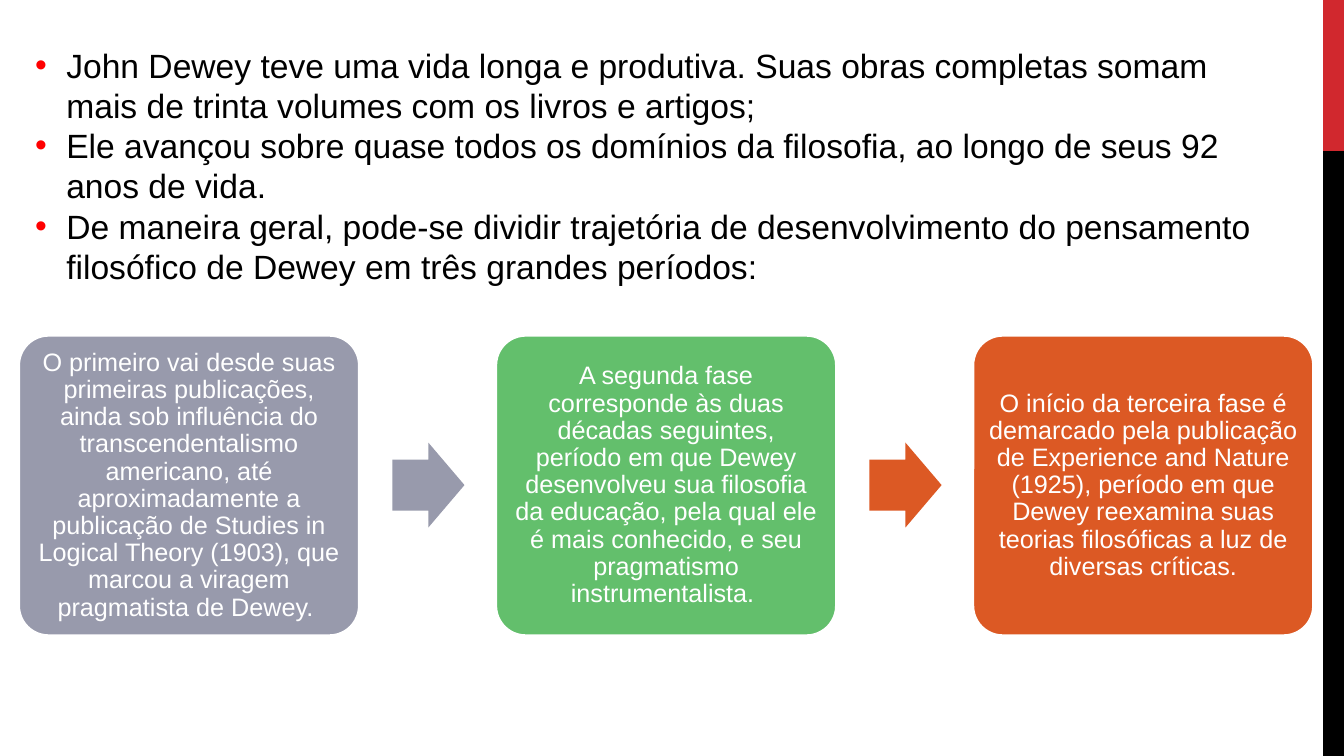
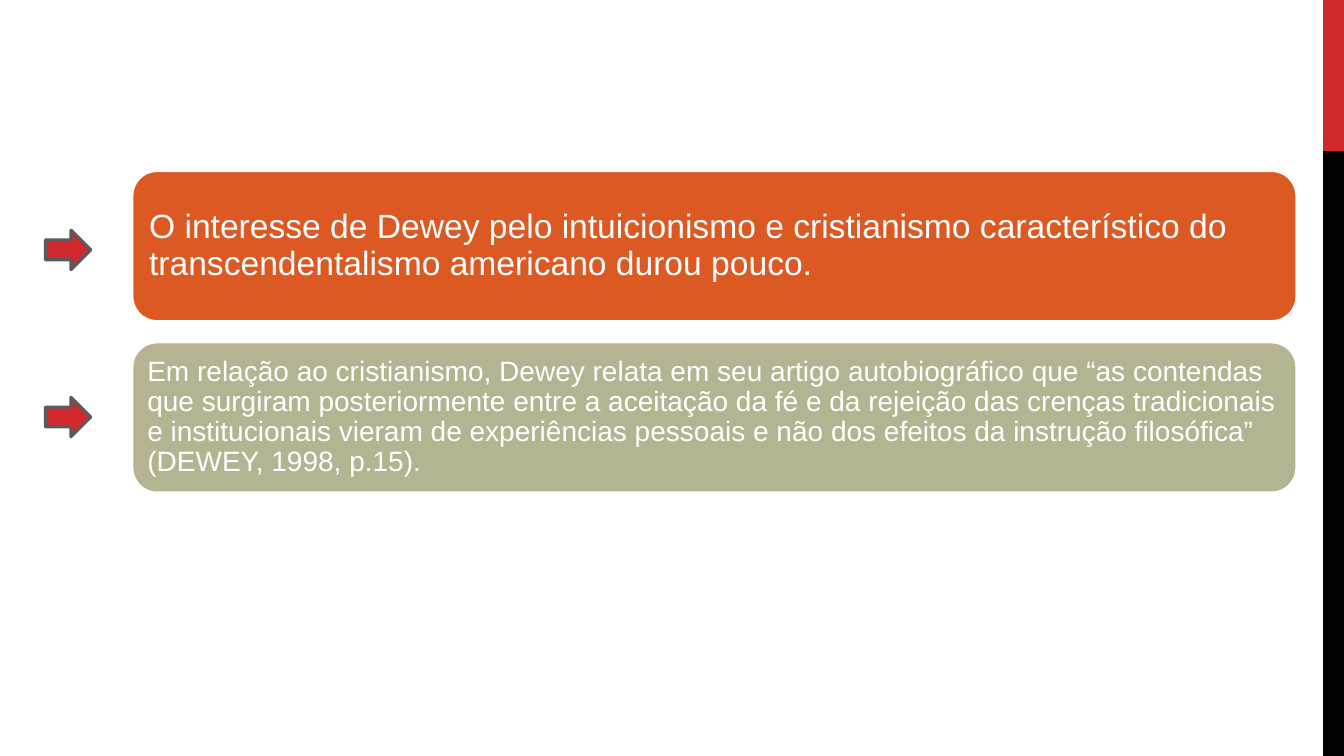
from lxml.etree import SubElement
from pptx import Presentation
from pptx.dml.color import RGBColor
from pptx.enum.shapes import MSO_SHAPE
from pptx.enum.text import MSO_ANCHOR, PP_ALIGN
from pptx.oxml.ns import qn
from pptx.util import Inches, Pt

RED = RGBColor(0xD1, 0x28, 0x2E)
BULLET_RED = RGBColor(0xFF, 0x00, 0x00)
BLACK = RGBColor(0x00, 0x00, 0x00)
WHITE = RGBColor(0xFF, 0xFF, 0xFF)
SLATE = RGBColor(0x98, 0x9A, 0xAC)
GREEN = RGBColor(0x63, 0xBF, 0x6C)
ORANGE = RGBColor(0xDC, 0x59, 0x24)
OLIVE = RGBColor(0xB4, 0xB3, 0x92)
GRAY = RGBColor(0x5A, 0x5A, 0x5A)

COLUMNS, ROWS = 160, 90
FONT = "Arial"
BLANK_LAYOUT = 6

INTRODUCTION = [
    "John Dewey teve uma vida longa e produtiva. Suas obras completas somam mais de trinta volumes "
    "com os livros e artigos;",
    "Ele avançou sobre quase todos os domínios da filosofia, ao longo de seus 92 anos de vida.",
    "De maneira geral, pode-se dividir trajetória de desenvolvimento do pensamento filosófico de "
    "Dewey em três grandes períodos:",
]
PERIODS = [
    (SLATE, "O primeiro vai desde suas primeiras publicações, ainda sob influência do "
     "transcendentalismo americano, até aproximadamente a publicação de Studies in Logical Theory "
     "(1903), que marcou a viragem pragmatista de Dewey. "),
    (GREEN, "A segunda fase corresponde às duas décadas seguintes, período em que Dewey desenvolveu "
     "sua filosofia da educação, pela qual ele é mais conhecido, e seu pragmatismo "
     "instrumentalista. "),
    (ORANGE, "O início da terceira fase é demarcado pela publicação de Experience and Nature (1925), "
     "período em que Dewey reexamina suas teorias filosóficas a luz de diversas críticas."),
]
REMARKS = [
    (ORANGE, 24, 0.1, "O interesse de Dewey pelo intuicionismo e cristianismo característico do "
     "transcendentalismo americano durou pouco."),
    (OLIVE, 20, 0.08, "Em relação ao cristianismo, Dewey relata em seu artigo autobiográfico que “as "
     "contendas que surgiram posteriormente entre a aceitação da fé e da rejeição das crenças "
     "tradicionais e institucionais vieram de experiências pessoais e não dos efeitos da instrução "
     "filosófica” (DEWEY, 1998, p.15)."),
]


class DeckBuilder:
    """Holds the shared style and the slide being built."""

    def __init__(self):
        """Start an empty widescreen deck."""
        self.deck = Presentation()
        self.deck.slide_width = Inches(13.333)
        self.deck.slide_height = Inches(7.5)
        self.page = None

    def area(self, left, top, width, height):
        """Turn grid columns and rows into slide lengths."""
        column = self.deck.slide_width / COLUMNS
        row = self.deck.slide_height / ROWS
        return int(left * column), int(top * row), int(width * column), int(height * row)

    def new_page(self):
        """Add a slide with the two bands on its right edge."""
        self.page = self.deck.slides.add_slide(self.deck.slide_layouts[BLANK_LAYOUT])
        self.shape(MSO_SHAPE.RECTANGLE, (157.5, 0, 2.5, 18), RED)
        self.shape(MSO_SHAPE.RECTANGLE, (157.5, 18, 2.5, 72), BLACK)

    def shape(self, kind, place, fill, line=None, adjustments=()):
        """Add a flat filled shape, with an outline if a line colour is given."""
        shape = self.page.shapes.add_shape(kind, *self.area(*place))
        shape.shadow.inherit = False
        shape.fill.solid()
        shape.fill.fore_color.rgb = fill
        if line is None:
            shape.line.fill.background()
        else:
            shape.line.color.rgb = line
            shape.line.width = Pt(2.25)
        for index, value in enumerate(adjustments):
            shape.adjustments[index] = value
        return shape

    def style(self, para, size, color):
        """Set the font of a paragraph."""
        para.font.name = FONT
        para.font.size = Pt(size)
        para.font.color.rgb = color

    def card(self, place, fill, text, size, inset, align, adjustments=()):
        """Add a rounded card with white text."""
        box = self.shape(MSO_SHAPE.ROUNDED_RECTANGLE, place, fill, WHITE, adjustments)
        frame = box.text_frame
        frame.word_wrap = True
        frame.vertical_anchor = MSO_ANCHOR.MIDDLE
        frame.margin_left = frame.margin_right = Inches(inset)
        frame.margin_top = frame.margin_bottom = Inches(inset)
        para = frame.paragraphs[0]
        para.text = text
        para.alignment = align
        para.line_spacing = 0.9
        self.style(para, size, WHITE)

    def arrow(self, place, fill, line=None, adjustments=()):
        """Add an arrow that points right."""
        self.shape(MSO_SHAPE.RIGHT_ARROW, place, fill, line, adjustments)

    def bullets(self, place, lines):
        """Add a text box with one red-bulleted paragraph per line."""
        frame = self.page.shapes.add_textbox(*self.area(*place)).text_frame
        frame.word_wrap = True
        for index, line in enumerate(lines):
            para = frame.add_paragraph() if index else frame.paragraphs[0]
            para.text = line
            properties = para._p.get_or_add_pPr()
            properties.set("marL", str(Inches(0.31)))
            properties.set("indent", str(-Inches(0.31)))
            color = SubElement(properties, qn("a:buClr"))
            SubElement(color, qn("a:srgbClr"), val=str(BULLET_RED))
            SubElement(properties, qn("a:buFont"), typeface=FONT)
            SubElement(properties, qn("a:buChar"), char="•")
            self.style(para, 24, BLACK)


def build_periods(builder):
    """Build the slide with the three periods."""
    builder.new_page()
    pitch = 56.8
    for index, (fill, text) in enumerate(PERIODS):
        left = 2.2 + index * pitch
        builder.card((left, 39.9, 40.6, 35.8), fill, text, 18, 0.07, PP_ALIGN.CENTER, (0.1,))
        if index:
            arrow_fill = SLATE if index == 1 else fill
            builder.arrow((left - 12.3, 52.7, 8.6, 10.1), arrow_fill, adjustments=(0.6, 0.5))
    builder.bullets((3, 4.7, 148.7, 30.2), INTRODUCTION)


def build_remarks(builder):
    """Build the slide with the two remarks."""
    builder.new_page()
    for index, (fill, size, inset, text) in enumerate(REMARKS):
        builder.card((15.7, 20.3 + index * 20.4, 138.7, 18), fill, text, size, inset, PP_ALIGN.LEFT)
        builder.arrow((5.4, 27.4 + index * 19.9, 5.4, 4.7), RED, GRAY)


def main():
    """Build and save the deck."""
    builder = DeckBuilder()
    build_periods(builder)
    build_remarks(builder)
    builder.deck.save("out.pptx")


if __name__ == "__main__":
    main()
